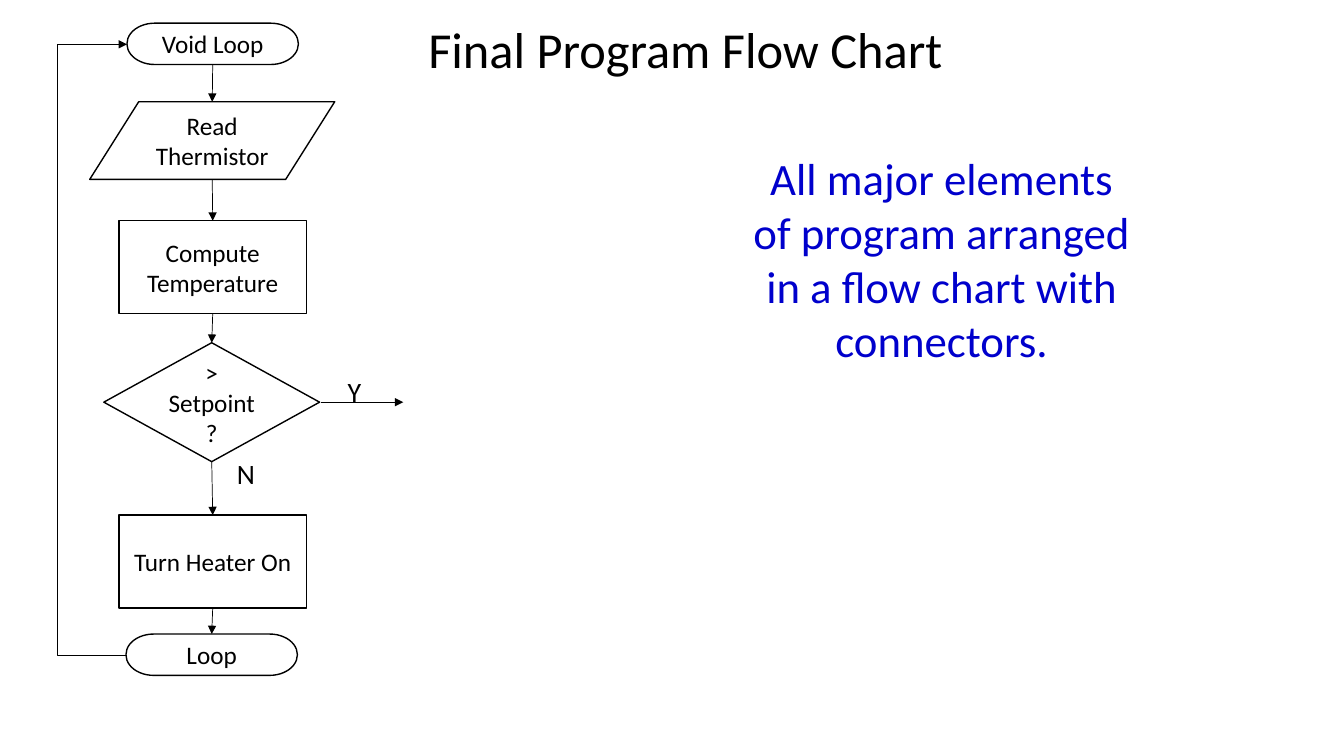
"""Build the program flow chart slide."""
from dataclasses import dataclass

from pptx import Presentation
from pptx.dml.color import RGBColor
from pptx.enum import shapes, text
from pptx.oxml import ns
from pptx.util import Inches, Pt
from lxml import etree

BLACK = RGBColor(0, 0, 0)
WHITE = RGBColor(255, 255, 255)
BLUE = RGBColor(0, 0, 0xCC)
FONT = "Calibri"
KIND = shapes.MSO_SHAPE
LINK = shapes.MSO_CONNECTOR
ALIGN = text.PP_ALIGN
ANCHOR = text.MSO_ANCHOR


@dataclass(frozen=True)
class Step:
    kind: KIND
    words: str
    left: float
    top: float
    width: float
    height: float


@dataclass(frozen=True)
class Arrow:
    x1: float
    y1: float
    x2: float
    y2: float


@dataclass(frozen=True)
class Label:
    words: str
    left: float
    top: float
    width: float
    height: float
    size: int = 20
    color: RGBColor = BLACK
    align: ALIGN = ALIGN.LEFT
    anchor: ANCHOR = ANCHOR.TOP
    spacing: float = 1.0
    wrap: bool = True


STEPS = [
    Step(KIND.FLOWCHART_TERMINATOR, "Void Loop", 1.26, 0.23, 1.7, 0.41),
    Step(KIND.FLOWCHART_DATA, "Read Thermistor", 0.89, 1.01, 2.43, 0.77),
    Step(KIND.FLOWCHART_PROCESS, "Compute\nTemperature", 1.18, 2.19, 1.86, 0.92),
    Step(KIND.FLOWCHART_DECISION, "> Setpoint?", 1.03, 3.4, 2.14, 1.18),
    Step(KIND.FLOWCHART_PROCESS, "Turn Heater On", 1.18, 5.11, 1.86, 0.92),
    Step(KIND.FLOWCHART_TERMINATOR, "Loop", 1.25, 6.29, 1.7, 0.41),
]
YES_BRANCH = Arrow(3.18, 3.99, 4, 3.99)
LOOP_BACK = Arrow(1.25, 6.5, 1.26, 0.44)
LOOP_LEFT = 0.56
LABELS = [
    Label("Final Program Flow Chart", 4.15, 0.13, 6.26, 0.77, size=36,
          anchor=ANCHOR.MIDDLE, spacing=0.9),
    Label("Y", 3.35, 3.67, 0.34, 0.44, wrap=False),
    Label("N", 2.25, 4.48, 0.38, 0.44, wrap=False),
    Label("All major elements of program arranged in a flow chart with connectors.",
          7.35, 1.45, 3.98, 2.26, size=32, color=BLUE, align=ALIGN.CENTER),
]


def write(frame, words: str, *, size: int = 18, color: RGBColor = BLACK,
          align: ALIGN = ALIGN.CENTER, anchor: ANCHOR = ANCHOR.MIDDLE,
          spacing: float = 1.0, wrap: bool = True) -> None:
    frame.text = words
    frame.word_wrap = wrap
    frame.vertical_anchor = anchor
    for paragraph in frame.paragraphs:
        paragraph.alignment = align
        paragraph.line_spacing = spacing
        for run in paragraph.runs:
            run.font.name = FONT
            run.font.size = Pt(size)
            run.font.color.rgb = color


def draw_step(slide, step: Step) -> None:
    box = slide.shapes.add_shape(step.kind, Inches(step.left), Inches(step.top),
                                 Inches(step.width), Inches(step.height))
    box.shadow.inherit = False
    box.fill.solid()
    box.fill.fore_color.rgb = WHITE
    box.line.color.rgb = BLACK
    box.line.width = Pt(1)
    write(box.text_frame, step.words)


def draw_arrow(slide, arrow: Arrow, kind: LINK = LINK.STRAIGHT):
    connector = slide.shapes.add_connector(kind, Inches(arrow.x1), Inches(arrow.y1),
                                           Inches(arrow.x2), Inches(arrow.y2))
    connector.line.color.rgb = BLACK
    connector.line.width = Pt(0.5)
    etree.SubElement(connector.line._get_or_add_ln(), ns.qn("a:tailEnd"), type="triangle")
    etree.SubElement(connector._element.spPr, ns.qn("a:effectLst"))
    return connector


def draw_loop_back(slide, arrow: Arrow, bend_x: float) -> None:
    connector = draw_arrow(slide, arrow, LINK.ELBOW)
    bend = round((bend_x - arrow.x1) / (arrow.x2 - arrow.x1) * 100000)
    geometry = connector._element.spPr.find(ns.qn("a:prstGeom"))
    guides = geometry.find(ns.qn("a:avLst"))
    etree.SubElement(guides, ns.qn("a:gd"), name="adj1", fmla=f"val {bend}")


def draw_label(slide, label: Label) -> None:
    box = slide.shapes.add_textbox(Inches(label.left), Inches(label.top),
                                   Inches(label.width), Inches(label.height))
    write(box.text_frame, label.words, size=label.size, color=label.color,
          align=label.align, anchor=label.anchor, spacing=label.spacing, wrap=label.wrap)


def main() -> None:
    deck = Presentation()
    deck.slide_width, deck.slide_height = Inches(13.33), Inches(7.5)
    slide = deck.slides.add_slide(deck.slide_layouts[6])
    for step in STEPS:
        draw_step(slide, step)
    for upper, lower in zip(STEPS, STEPS[1:]):
        draw_arrow(slide, Arrow(upper.left + upper.width / 2, upper.top + upper.height,
                                lower.left + lower.width / 2, lower.top))
    draw_arrow(slide, YES_BRANCH)
    draw_loop_back(slide, LOOP_BACK, LOOP_LEFT)
    for label in LABELS:
        draw_label(slide, label)
    deck.save("out.pptx")


if __name__ == "__main__":
    main()
